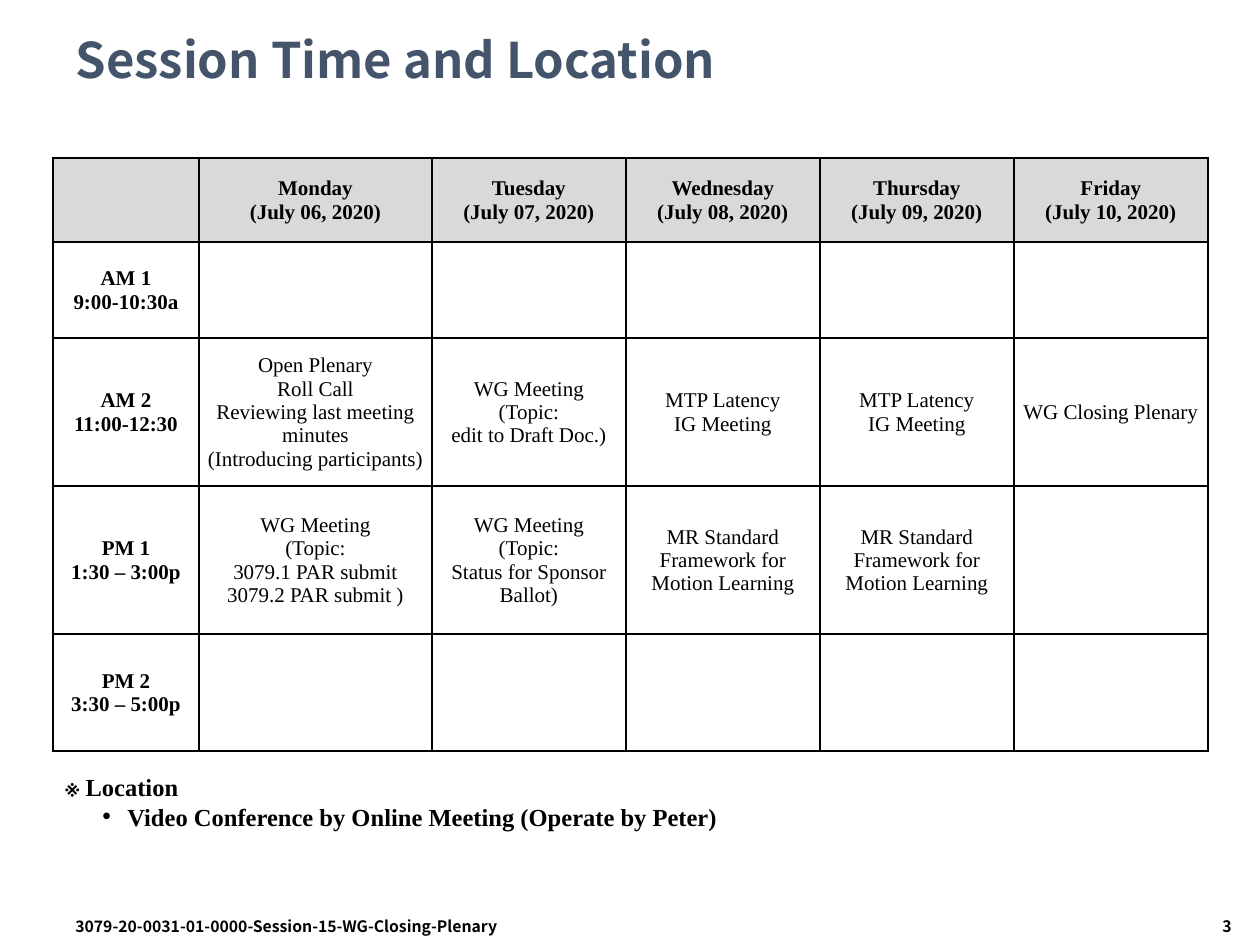
from lxml import etree
from pptx import Presentation
from pptx.dml.color import RGBColor
from pptx.enum.text import MSO_ANCHOR, PP_ALIGN
from pptx.oxml.ns import qn
from pptx.util import Pt

LEFT, CENTER, RIGHT = PP_ALIGN.LEFT, PP_ALIGN.CENTER, PP_ALIGN.RIGHT
MIDDLE = MSO_ANCHOR.MIDDLE
BLACK = RGBColor(0x00, 0x00, 0x00)
SLATE = RGBColor(0x44, 0x54, 0x6A)
HEADER_GREY = RGBColor(0xD9, 0xD9, 0xD9)
SANS, SERIF = "Noto Sans CJK KR", "Times New Roman"
EMU_PER_PX = 914400 / 126

TITLE = "Session Time and Location"
DAYS = ["Monday", "Tuesday", "Wednesday", "Thursday", "Friday"]
LATENCY = ["MTP Latency", "IG Meeting"]
LEARNING = ["MR Standard Framework for Motion Learning"]
SESSIONS = [
    (["AM 1", "9:00-10:30a"], [], [], [], [], []),
    (["AM 2", "11:00-12:30"],
     ["Open Plenary", "Roll Call", "Reviewing last meeting minutes",
      "(Introducing participants)"],
     ["WG Meeting", "(Topic:", "edit to Draft Doc.)"],
     LATENCY, LATENCY, ["WG Closing Plenary"]),
    (["PM 1", "1:30 – 3:00p"],
     ["WG Meeting", "(Topic:", "3079.1 PAR submit", "3079.2 PAR submit )"],
     ["WG Meeting", "(Topic:", "Status for Sponsor Ballot)"],
     LEARNING, LEARNING, []),
    (["PM 2", "3:30 – 5:00p"], [], [], [], [], []),
]
LOCATION = ["※ Location", "Video Conference by Online Meeting (Operate by Peter)"]
FOOTER = "3079-20-0031-01-0000-Session-15-WG-Closing-Plenary"
PAGE = "3"

COLUMN_WIDTHS = [146, 233] + [194] * len(DAYS[1:])
ROW_HEIGHTS = [84, 96, 148, 148, 117]


def px(length):
    return round(length * EMU_PER_PX)


def box(*lengths):
    return [px(length) for length in lengths]


def write(frame, lines, size, font=SERIF, color=BLACK, bold=True, align=LEFT):
    """Fill a text frame, one paragraph a line."""
    frame.word_wrap = True
    frame.text = "\n".join(lines)
    for paragraph in frame.paragraphs:
        paragraph.alignment = align
        for run in paragraph.runs:
            run.font.size = Pt(size)
            run.font.name = font
            run.font.bold = bold
            run.font.color.rgb = color


def add_text(slide, place, lines, size, **text_format):
    frame = slide.shapes.add_textbox(*box(*place)).text_frame
    write(frame, lines, size, **text_format)
    return frame


def add_bullet(paragraph, margin, indent):
    properties = paragraph._p.get_or_add_pPr()
    properties.set("marL", str(px(margin)))
    properties.set("indent", str(px(indent)))
    etree.SubElement(properties, qn("a:buFont"), typeface="Arial")
    etree.SubElement(properties, qn("a:buChar"), char="•")


def add_borders(cell):
    properties = cell._tc.get_or_add_tcPr()
    for side in ("lnL", "lnR", "lnT", "lnB"):
        line = etree.SubElement(properties, qn(f"a:{side}"), w=str(Pt(1)))
        fill = etree.SubElement(line, qn("a:solidFill"))
        etree.SubElement(fill, qn("a:srgbClr"), val=str(BLACK))


def format_cell(cell, lines, header, bold):
    cell.margin_left = cell.margin_right = cell.margin_top = px(1)
    cell.margin_bottom = 0
    cell.vertical_anchor = MIDDLE
    add_borders(cell)
    if header:
        cell.fill.solid()
        cell.fill.fore_color.rgb = HEADER_GREY
    else:
        cell.fill.background()
    write(cell.text_frame, lines, 12, bold=bold, align=CENTER)


def add_schedule(slide):
    header = [[]] + [[day, f"(July {date:02}, 2020)"]
                     for date, day in enumerate(DAYS, 6)]
    rows = [header, *SESSIONS]
    place = box(53, 158, sum(COLUMN_WIDTHS), sum(ROW_HEIGHTS))
    table = slide.shapes.add_table(len(rows), len(header), *place).table
    table.first_row = table.horz_banding = False
    for column, width in zip(table.columns, COLUMN_WIDTHS):
        column.width = px(width)
    for row, height in zip(table.rows, ROW_HEIGHTS):
        row.height = px(height)
    for r, row in enumerate(rows):
        for c, lines in enumerate(row):
            format_cell(table.cell(r, c), lines, header=r == 0,
                        bold=r == 0 or c == 0)


def main():
    deck = Presentation()
    deck.slide_width, deck.slide_height = box(1260, 945)
    slide = deck.slides.add_slide(deck.slide_layouts[5])

    title = slide.shapes.title
    title.left, title.top, title.width, title.height = box(63, 21, 1134, 84)
    write(title.text_frame, [TITLE], 28, font=SANS, color=SLATE)
    title.text_frame.vertical_anchor = MIDDLE
    title.text_frame.paragraphs[0].line_spacing = 0.9

    add_text(slide, (1040, 911, 204, 34), [PAGE], 9, font=SANS, align=RIGHT)
    add_text(slide, (63, 911, 557, 34), [FOOTER], 9, font=SANS)
    location = add_text(slide, (53, 766, 1155, 72), LOCATION, 14)
    add_bullet(location.paragraphs[1], 62, -25)
    add_schedule(slide)
    deck.save("out.pptx")


if __name__ == "__main__":
    main()
